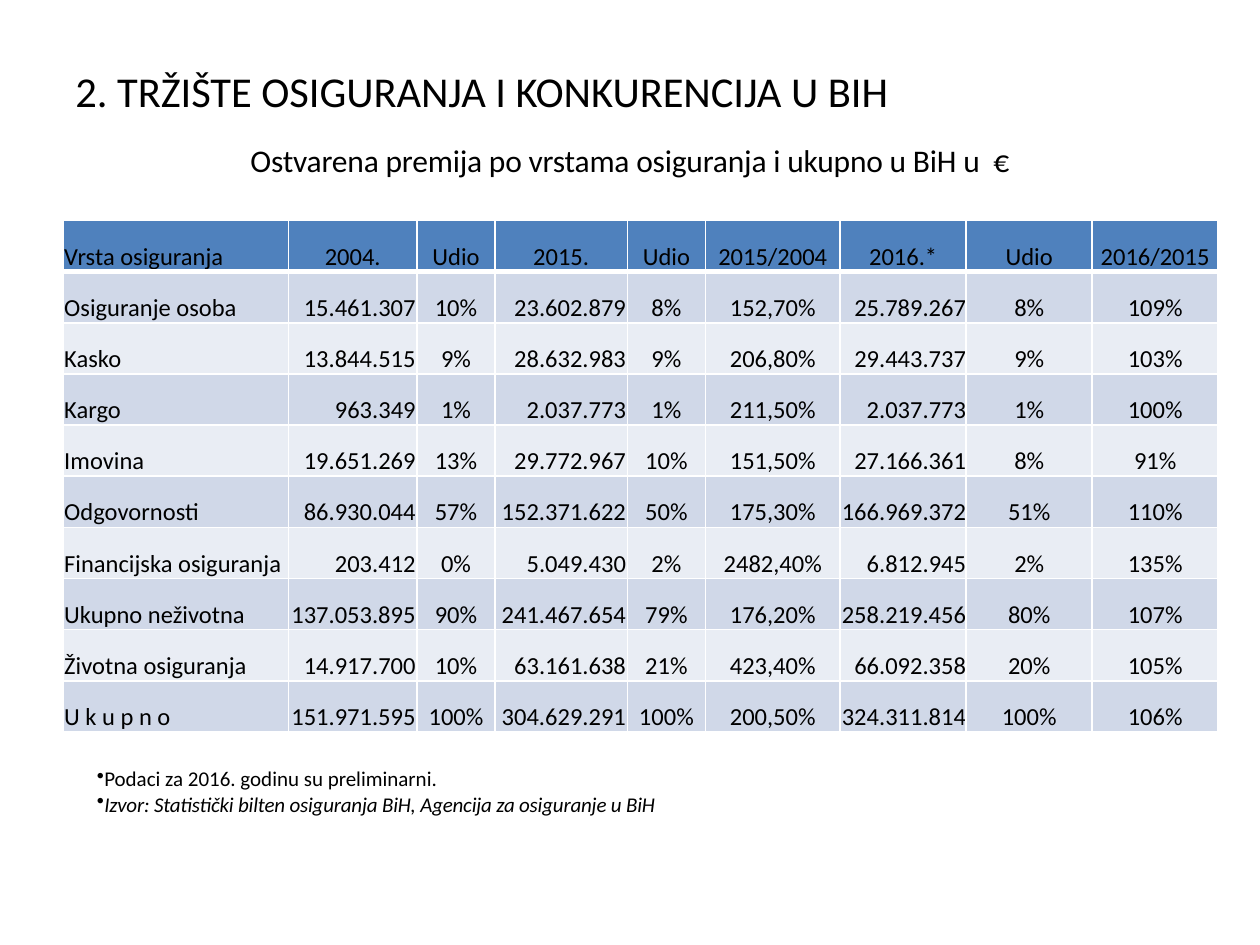
from pptx import Presentation
from pptx import util as u
from pptx.dml.color import RGBColor
from pptx.enum import text
from pptx.oxml.xmlchemy import OxmlElement

COLORS = {"ink": "000000", "head": "4F81BD", "odd": "D0D8E8",
          "even": "E9EDF4", "rule": "FFFFFF"}
ALIGN = {"l": text.PP_ALIGN.LEFT, "c": text.PP_ALIGN.CENTER,
         "r": text.PP_ALIGN.RIGHT}
WIDTHS = [1.79, 1.02, 0.62, 1.05, 0.62, 1.07, 1, 1, 1]
HEAD_ALIGN, BODY_ALIGN = "lcccccccc", "lrcrccrcc"
ROWS = [
    ["Vrsta osiguranja", "2004.", "Udio", "2015.", "Udio", "2015/2004",
     "2016.*", "Udio", "2016/2015"],
    ["Osiguranje osoba", "15.461.307", "10%", "23.602.879", "8%", "152,70%",
     "25.789.267", "8%", "109%"],
    ["Kasko", "13.844.515", "9%", "28.632.983", "9%", "206,80%",
     "29.443.737", "9%", "103%"],
    ["Kargo", "963.349", "1%", "2.037.773", "1%", "211,50%",
     "2.037.773", "1%", "100%"],
    ["Imovina", "19.651.269", "13%", "29.772.967", "10%", "151,50%",
     "27.166.361", "8%", "91%"],
    ["Odgovornosti", "86.930.044", "57%", "152.371.622", "50%", "175,30%",
     "166.969.372", "51%", "110%"],
    ["Financijska osiguranja", "203.412", "0%", "5.049.430", "2%", "2482,40%",
     "6.812.945", "2%", "135%"],
    ["Ukupno neživotna", "137.053.895", "90%", "241.467.654", "79%", "176,20%",
     "258.219.456", "80%", "107%"],
    ["Životna osiguranja", "14.917.700", "10%", "63.161.638", "21%", "423,40%",
     "66.092.358", "20%", "105%"],
    ["U k u p n o", "151.971.595", "100%", "304.629.291", "100%", "200,50%",
     "324.311.814", "100%", "106%"],
]


def color(name):
    return RGBColor.from_string(COLORS[name])


def write(para, words, size=14, align="l", italic=False, tight=False):
    para.alignment = ALIGN[align]
    run = para.add_run()
    run.text = words
    font = run.font
    font.name, font.size, font.italic = "Calibri", u.Pt(size), italic
    font.color.rgb = color("ink")
    if tight:
        run._r.get_or_add_rPr().set("spc", "-10")


def add_box(slide, left, top, width, height):
    box = slide.shapes.add_textbox(*map(u.Inches, (left, top, width, height)))
    box.text_frame.word_wrap = True
    return box.text_frame


def add_bullet(para):
    props = para._p.get_or_add_pPr()
    props.set("marL", "0")
    props.set("indent", "0")
    mark = OxmlElement("a:buChar")
    mark.set("char", "•")
    props.append(mark)


def add_rule(cell, side, points):
    """Draw one border of a cell; side is L, R, T or B."""
    line = OxmlElement(f"a:ln{side}")
    line.set("w", str(u.Pt(points)))
    fill = OxmlElement("a:solidFill")
    tone = OxmlElement("a:srgbClr")
    tone.set("val", COLORS["rule"])
    fill.append(tone)
    line.append(fill)
    cell._tc.get_or_add_tcPr().append(line)


def fill_cell(cell, words, row, col):
    edge = u.Inches(0.01 if row == 0 or col < 6 else 0)
    cell.margin_left = cell.margin_right = cell.margin_top = edge
    cell.margin_bottom = 0
    cell.vertical_anchor = text.MSO_ANCHOR.BOTTOM
    for side in "LRTB":
        thick = (row, side) in ((0, "B"), (1, "T"))
        add_rule(cell, side, 3 if thick else 1)
    cell.fill.solid()
    tone = "head" if row == 0 else "odd" if row % 2 else "even"
    cell.fill.fore_color.rgb = color(tone)
    aligns = BODY_ALIGN if row else HEAD_ALIGN
    write(cell.text_frame.paragraphs[0], words, align=aligns[col])


def add_grid(slide):
    frame = slide.shapes.add_table(len(ROWS), len(WIDTHS), u.Inches(0.5),
                                   u.Inches(1.75), u.Inches(sum(WIDTHS)),
                                   u.Inches(4.06))
    table = frame.table
    for col, width in zip(table.columns, WIDTHS):
        col.width = u.Inches(width)
    for r, row in enumerate(ROWS):
        for c, words in enumerate(row):
            fill_cell(table.cell(r, c), words, r, c)


def main():
    deck = Presentation()
    deck.slide_width, deck.slide_height = u.Inches(10), u.Inches(7.5)
    slide = deck.slides.add_slide(deck.slide_layouts[6])

    title = add_box(slide, 0.5, 0.3, 9, 1.25)
    title.vertical_anchor = text.MSO_ANCHOR.MIDDLE
    title.margin_bottom = u.Inches(0.46)
    write(title.paragraphs[0], "2. TRŽIŠTE OSIGURANJA I KONKURENCIJA U BIH",
          size=24.3)

    add_grid(slide)

    lead = add_box(slide, 0.51, 1.07, 8.98, 0.4)
    write(lead.paragraphs[0],
          "Ostvarena premija po vrstama osiguranja i ukupno u BiH u  €",
          size=18, align="c", tight=True)

    notes = add_box(slide, 0.67, 6.03, 7.01, 0.5)
    first, second = notes.paragraphs[0], notes.add_paragraph()
    write(first, "Podaci za 2016. godinu su preliminarni.", size=12)
    write(second, "Izvor: Statistički bilten osiguranja BiH, "
          "Agencija za osiguranje u BiH", size=12, italic=True, tight=True)
    for para in (first, second):
        add_bullet(para)

    deck.save("out.pptx")


if __name__ == "__main__":
    main()
